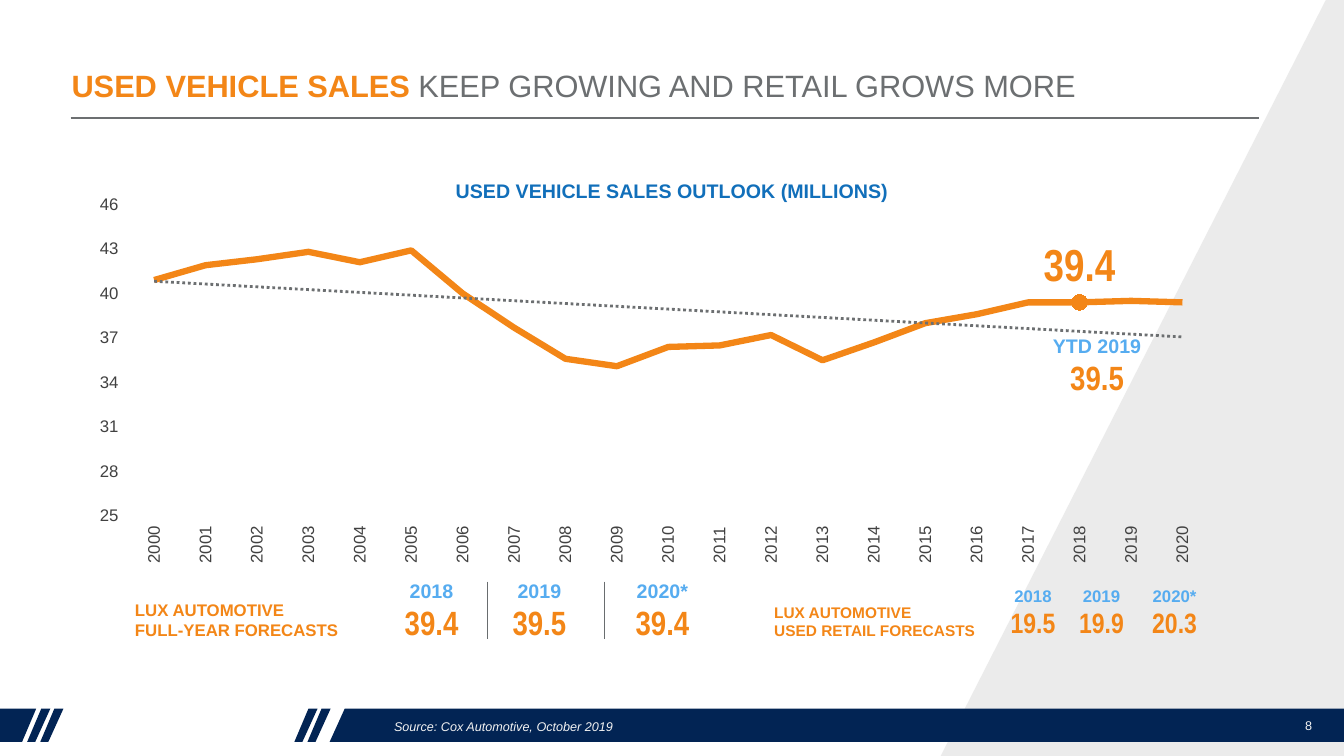
"""Build the used vehicle sales outlook slide."""
import copy
import dataclasses

import lxml.etree
import pptx
import pptx.chart.data
import pptx.dml.color
import pptx.enum.chart
import pptx.enum.dml
import pptx.enum.shapes
import pptx.enum.text
import pptx.oxml
import pptx.oxml.ns
import pptx.util

Inches = pptx.util.Inches
Pt = pptx.util.Pt
RGBColor = pptx.dml.color.RGBColor
Align = pptx.enum.text.PP_ALIGN
Anchor = pptx.enum.text.MSO_ANCHOR
qn = pptx.oxml.ns.qn

ORANGE = RGBColor(0xF3, 0x86, 0x17)
SKY = RGBColor(0x56, 0xAC, 0xF0)
BLUE = RGBColor(0x11, 0x6F, 0xBA)
NAVY = RGBColor(0x02, 0x24, 0x54)
GREY = RGBColor(0x6C, 0x6F, 0x71)
DIVIDER_GREY = RGBColor(0x69, 0x6D, 0x6F)
AXIS_GREY = RGBColor(0x41, 0x41, 0x41)
WEDGE_GREY = RGBColor(0xD9, 0xD9, 0xD9)
FOOTER_WHITE = RGBColor(0xF2, 0xF2, 0xF2)

BAR_TOP, BAR_BOTTOM = 7.03, 7.36
SALES = [40.9, 41.9, 42.3, 42.8, 42.1, 42.9, 40, 37.7, 35.6, 35.1, 36.4,
         36.5, 37.2, 35.5, 36.7, 38, 38.6, 39.4, 39.4, 39.5, 39.4]
FIRST_YEAR = 2000
LABELLED_YEAR = 2018


@dataclasses.dataclass
class Forecast:
    left: float
    top: float
    width: float
    heading: str
    value: str
    heading_size: int = 14
    value_size: int = 24


@dataclasses.dataclass
class Caption:
    left: float
    top: float
    width: float
    height: float
    lines: tuple[str, ...]
    size: int
    color: RGBColor = ORANGE
    bold: bool = True
    italic: bool = False
    align: Align = Align.LEFT
    anchor: Anchor = Anchor.TOP
    wrap: bool = False


FORECASTS = [
    Forecast(3.91, 5.69, 0.74, "2018", "39.4"),
    Forecast(4.98, 5.69, 0.74, "2019", "39.5"),
    Forecast(6.2, 5.69, 0.74, "2020*", "39.4"),
    Forecast(10.34, 3.26, 1.08, "YTD 2019", "39.5"),
    Forecast(9.92, 5.76, 0.65, "2018", "19.5", 12, 20),
    Forecast(10.6, 5.76, 0.65, "2019", "19.9", 12, 20),
    Forecast(11.28, 5.76, 0.74, "2020*", "20.3", 12, 20),
]
CAPTIONS = [
    Caption(3.81, 7.04, 7.91, 0.33, ("Source: Cox Automotive, October 2019",), 9,
            FOOTER_WHITE, bold=False, italic=True, anchor=Anchor.MIDDLE, wrap=True),
    Caption(12.74, 7, 0.48, 0.4, ("8",), 9, FOOTER_WHITE, bold=False,
            align=Align.CENTER, anchor=Anchor.MIDDLE, wrap=True),
    Caption(0, 1.73, 13.33, 0.34, ("USED VEHICLE SALES OUTLOOK (MILLIONS)",), 14,
            BLUE, align=Align.CENTER, wrap=True),
    Caption(1.24, 5.9, 2.24, 0.5, ("LUX AUTOMOTIVE", "FULL-YEAR FORECASTS"), 12),
    Caption(7.58, 5.93, 2.23, 0.47, ("LUX AUTOMOTIVE", "USED RETAIL FORECASTS"), 11),
]


def style(font, *, size: float, color: RGBColor, name: str = "Arial",
          bold: bool = False, italic: bool = False) -> None:
    font.size, font.name, font.bold, font.italic = Pt(size), name, bold, italic
    font.color.rgb = color


def write(para, text: str, **options) -> None:
    span = para.add_run()
    span.text = text.rstrip("\n")
    style(span.font, **options)
    if text.endswith("\n"):
        para.add_line_break()
        para._p[-1].append(copy.deepcopy(span._r.rPr))


def add_box(page, left: float, top: float, width: float, height: float,
            wrap: bool = False, anchor: Anchor = Anchor.TOP):
    box = page.shapes.add_textbox(Inches(left), Inches(top), Inches(width), Inches(height))
    box.text_frame.word_wrap = wrap
    box.text_frame.vertical_anchor = anchor
    return box.text_frame


def add_caption(page, caption: Caption) -> None:
    frame = add_box(page, caption.left, caption.top, caption.width, caption.height,
                    caption.wrap, caption.anchor)
    for index, line in enumerate(caption.lines):
        para = frame.add_paragraph() if index else frame.paragraphs[0]
        para.alignment = caption.align
        write(para, line, size=caption.size, color=caption.color,
              bold=caption.bold, italic=caption.italic)


def add_forecast(page, forecast: Forecast) -> None:
    height = 0.74 if forecast.value_size == 24 else 0.64
    para = add_box(page, forecast.left, forecast.top, forecast.width, height).paragraphs[0]
    para.alignment = Align.CENTER
    write(para, forecast.heading + "\n", size=forecast.heading_size, color=SKY, bold=True)
    write(para, forecast.value, size=forecast.value_size, color=ORANGE,
          name="Arial Narrow", bold=True)


def add_polygon(page, points: list[tuple[float, float]], color: RGBColor):
    corners = [(Inches(x), Inches(y)) for x, y in points]
    builder = page.shapes.build_freeform(*corners[0])
    builder.add_line_segments(corners[1:])
    shape = builder.convert_to_shape()
    shape.shadow.inherit = False
    shape.fill.solid()
    shape.fill.fore_color.rgb = color
    shape.line.fill.background()
    return shape


def add_line(page, start: tuple[float, float], end: tuple[float, float],
             color: RGBColor, width: float) -> None:
    line = page.shapes.add_connector(pptx.enum.shapes.MSO_CONNECTOR.STRAIGHT,
                                     *map(Inches, start + end))
    line.line.color.rgb = color
    line.line.width = Pt(width)
    lxml.etree.SubElement(line._element.spPr, qn("a:effectLst"))


def add_background(page) -> None:
    wedge = add_polygon(page, [(13.15, 0), (13.33, 0), (13.33, 7.5), (9.33, 7.5)], WEDGE_GREY)
    tint = wedge._element.spPr.find(".//" + qn("a:srgbClr"))
    lxml.etree.SubElement(tint, qn("a:alpha"), val="50000")
    for foot in (0.27, 0.4, 2.92, 3.05):
        add_polygon(page, [(foot + 0.14, BAR_TOP), (foot + 0.23, BAR_TOP),
                           (foot + 0.08, BAR_BOTTOM), (foot, BAR_BOTTOM)], NAVY)
    add_polygon(page, [(0, BAR_TOP), (0.36, BAR_TOP), (0.22, BAR_BOTTOM), (0, BAR_BOTTOM)], NAVY)
    add_polygon(page, [(3.42, BAR_TOP), (13.33, BAR_TOP),
                       (13.33, BAR_BOTTOM), (3.27, BAR_BOTTOM)], NAVY)
    add_line(page, (0.7, 1.17), (12.49, 1.17), GREY, 1)


def add_chart(page) -> None:
    sales = pptx.chart.data.CategoryChartData(number_format="General")
    sales.categories = [str(FIRST_YEAR + index) for index in range(len(SALES))]
    sales.add_series("Series 1", SALES)
    chart = page.shapes.add_chart(pptx.enum.chart.XL_CHART_TYPE.LINE, Inches(0.61), Inches(1.32),
                                  Inches(11.86), Inches(5.09), sales).chart
    chart.has_title = chart.has_legend = False
    style(chart.font, size=18, color=AXIS_GREY)
    for axis in (chart.category_axis, chart.value_axis):
        axis.has_major_gridlines = False
        axis.format.line.fill.background()
        style(axis.tick_labels.font, size=12, color=AXIS_GREY)
    chart.category_axis._element.find(".//" + qn("a:bodyPr")).set("rot", "-5400000")
    scale = chart.value_axis
    scale.minimum_scale, scale.maximum_scale, scale.major_unit = 25, 46, 3

    chart.plots[0].vary_by_categories = False
    series = chart.plots[0].series[0]
    series.smooth = False
    series.format.line.color.rgb = ORANGE
    series.format.line.width = Pt(4.5)
    series.marker.style = pptx.enum.chart.XL_MARKER_STYLE.NONE
    point = series.points[LABELLED_YEAR - FIRST_YEAR]
    point.format.line.color.rgb = ORANGE
    point.format.line.width = Pt(4.5)
    point.marker.style = pptx.enum.chart.XL_MARKER_STYLE.CIRCLE
    point.marker.size = 11
    point.marker.format.fill.solid()
    point.marker.format.fill.fore_color.rgb = ORANGE
    point.marker.format.line.color.rgb = ORANGE
    style(point.data_label.font, size=32, color=ORANGE, name="Arial Narrow", bold=True)
    point.data_label.position = pptx.enum.chart.XL_LABEL_POSITION.ABOVE

    names = pptx.oxml.ns.nsdecls("c", "a")
    trend = pptx.oxml.parse_xml(
        f'<c:trendline {names}><c:spPr><a:ln w="25400"><a:solidFill><a:srgbClr val="{GREY}"/>'
        '</a:solidFill><a:prstDash val="sysDot"/></a:ln></c:spPr><c:trendlineType val="linear"/>'
        '<c:dispRSqr val="0"/><c:dispEq val="0"/></c:trendline>')
    series._element.find(qn("c:cat")).addprevious(trend)
    area = chart._chartSpace.find(".//" + qn("c:plotArea"))
    for layout in area.findall(qn("c:layout")):
        area.remove(layout)
    edges = "".join(f'<c:{tag} val="{value}"/>' for tag, value in (
        ("layoutTarget", "inner"), ("xMode", "edge"), ("yMode", "edge"),
        ("x", 0.056), ("y", 0.139), ("w", 0.903), ("h", 0.608)))
    area.insert(0, pptx.oxml.parse_xml(
        f"<c:layout {names}><c:manualLayout>{edges}</c:manualLayout></c:layout>"))


def add_title(page) -> None:
    title = page.shapes.title
    title.left, title.top, title.width, title.height = map(Inches, (0.61, 0.43, 11.86, 0.83))
    title.text_frame.vertical_anchor = Anchor.MIDDLE
    title.text_frame.auto_size = pptx.enum.text.MSO_AUTO_SIZE.NONE
    para = title.text_frame.paragraphs[0]
    para.alignment = Align.LEFT
    write(para, "USED VEHICLE SALES ", size=22, color=ORANGE, bold=True)
    write(para, "KEEP GROWING AND RETAIL GROWS MORE", size=22, color=GREY)


def main() -> None:
    deck = pptx.Presentation()
    deck.slide_width, deck.slide_height = Inches(13.33), Inches(7.5)
    page = deck.slides.add_slide(deck.slide_layouts[5])
    add_background(page)
    add_title(page)
    add_chart(page)
    for caption in CAPTIONS:
        add_caption(page, caption)
    for forecast in FORECASTS:
        add_forecast(page, forecast)
    for x in (4.84, 6):
        add_line(page, (x, 5.77), (x, 6.34), DIVIDER_GREY, 0.75)
    deck.save("out.pptx")


if __name__ == "__main__":
    main()
